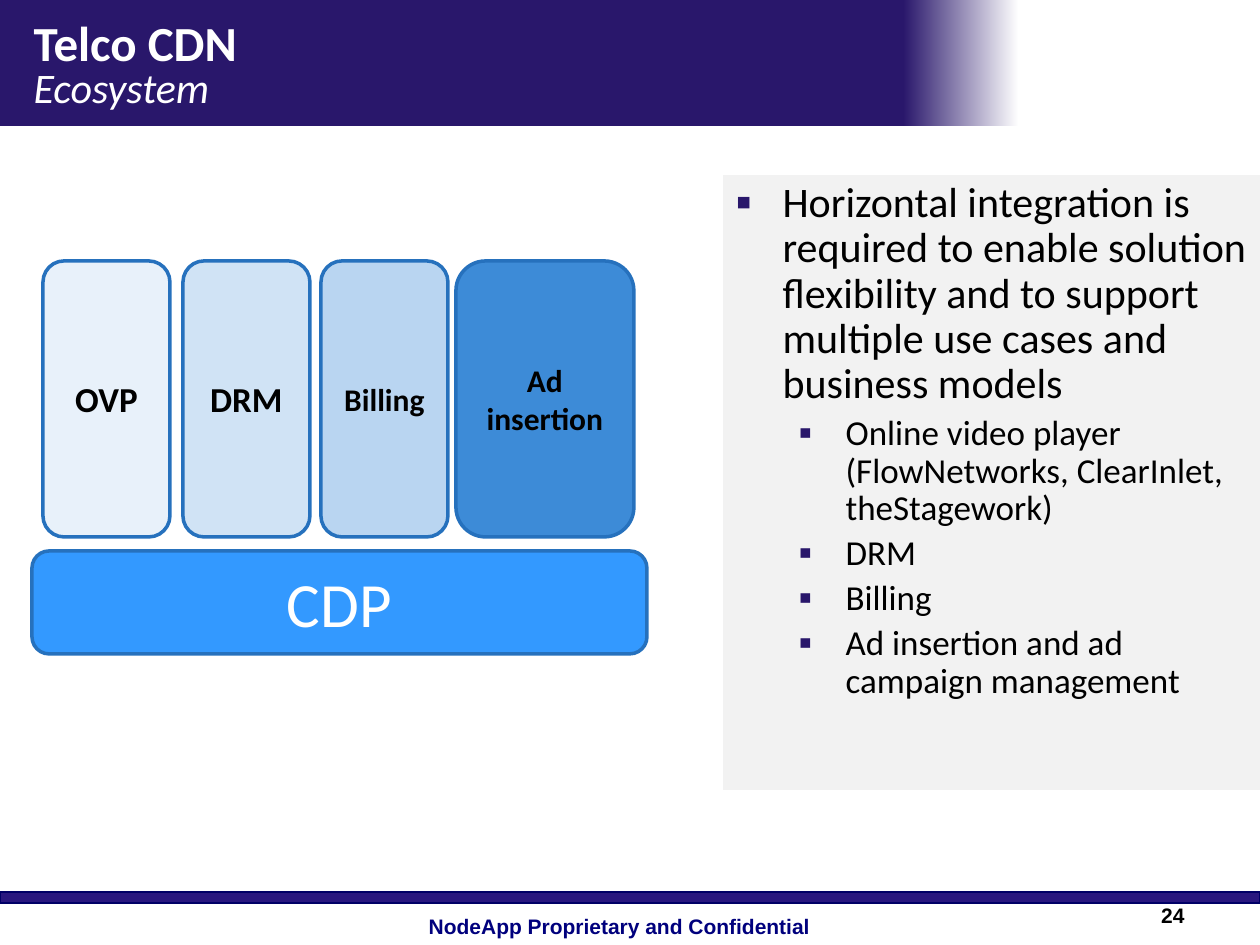
from lxml.etree import SubElement
from pptx import Presentation
from pptx.dml.color import RGBColor
from pptx.enum.shapes import MSO_SHAPE
from pptx.enum.text import MSO_ANCHOR, MSO_AUTO_SIZE, PP_ALIGN
from pptx.oxml.ns import qn
from pptx.util import Pt

SCALE = 914400 / 126
HUES = {
    "navy": "29176B", "rule": "29177F", "edge": "000066", "foot": "00007D",
    "white": "FFFFFF", "black": "000000", "panel": "F2F2F2", "line": "2671BD",
    "base": "3399FF", "ovp": "E8F1FA", "drm": "D0E3F5", "bill": "B9D5F1",
    "ads": "3D8BD7",
}


def px(num):
    """Turn pixels into EMU."""
    return round(num * SCALE)


def hue(name):
    """Look up a colour by name."""
    return RGBColor.from_string(HUES[name])


def apply(item, vals):
    """Set each attribute in a dict of values."""
    for key, val in vals.items():
        setattr(item, key, val)


class Deck:
    """Hold the style and the current slide."""

    def __init__(self):
        """Open a deck with one title and content slide."""
        self.prs = Presentation()
        apply(self.prs, {"slide_width": px(1260), "slide_height": px(945)})
        self.slide = self.prs.slides.add_slide(self.prs.slide_layouts[1])
        self.shapes = self.slide.shapes

    def run(self, para, text, size, tone="black", face="Calibri", **more):
        """Add a styled run to a paragraph."""
        run = para.add_run()
        run.text = text
        apply(run.font, {"size": Pt(size), "name": face, **more})
        run.font.color.rgb = hue(tone)

    def frame(self, shape, anchor):
        """Set wrap and anchor of a text frame and return it."""
        apply(shape.text_frame, {
            "word_wrap": True, "auto_size": MSO_AUTO_SIZE.NONE,
            "vertical_anchor": anchor})
        return shape.text_frame

    def box(self, area, fill, edge=None, width=2, kind=MSO_SHAPE.RECTANGLE):
        """Draw a filled shape."""
        shape = self.shapes.add_shape(kind, *map(px, area))
        shape.shadow.inherit = False
        shape.fill.solid()
        shape.fill.fore_color.rgb = hue(fill)
        if edge:
            shape.line.color.rgb = hue(edge)
            shape.line.width = Pt(width)
        else:
            shape.line.fill.background()
        return shape

    def fade(self, area, start, end):
        """Draw a band that fades from left to right."""
        fill = self.box(area, start).fill
        fill.gradient()
        fill.gradient_angle = 0
        for stop, name, spot in zip(fill.gradient_stops, (start, end), (0, 1)):
            stop.color.rgb = hue(name)
            stop.position = spot

    def block(self, area, fill, text, size, tone="black", bold=True):
        """Draw a rounded block with a centred label."""
        shape = self.box(area, fill, "line", kind=MSO_SHAPE.ROUNDED_RECTANGLE)
        para = self.frame(shape, MSO_ANCHOR.MIDDLE).paragraphs[0]
        para.alignment = PP_ALIGN.CENTER
        self.run(para, text, size, tone, bold=bold)

    def note(self, area, text, tone, align):
        """Add a small bold footer text."""
        shape = self.shapes.add_textbox(*map(px, area))
        para = self.frame(shape, MSO_ANCHOR.BOTTOM).paragraphs[0]
        para.alignment = align
        self.run(para, text, 12, tone, "Arial", bold=True)

    def holder(self, shape, area, anchor):
        """Place a placeholder in front and return its text frame."""
        self.shapes.element.append(shape.element)
        apply(shape, dict(zip(("left", "top", "width", "height"), map(px, area))))
        return self.frame(shape, anchor)

    def title(self, area, head, sub):
        """Fill the title with a heading and a subheading."""
        frame = self.holder(self.shapes.title, area, MSO_ANCHOR.MIDDLE)
        para = frame.paragraphs[0]
        apply(para, {"alignment": PP_ALIGN.LEFT, "line_spacing": 0.8})
        self.run(para, head, 28, "white", bold=True)
        para.add_line_break()
        self.run(para, sub, 24, "white", bold=False, italic=True)

    def bullet(self, para, left):
        """Give a paragraph a square bullet and a hanging indent."""
        props = para._p.get_or_add_pPr()
        props.set("marL", str(px(left)))
        props.set("indent", str(px(-47)))
        tint = SubElement(props, qn("a:buClr"))
        SubElement(tint, qn("a:srgbClr"), val=HUES["navy"])
        SubElement(props, qn("a:buSzPct"), val="110000")
        SubElement(props, qn("a:buFont"), typeface="Arial")
        SubElement(props, qn("a:buChar"), char="▪")

    def body(self, area, fill, rows):
        """Fill the body with a bulleted list of (level, text) rows."""
        shape = self.slide.placeholders[1]
        frame = self.holder(shape, area, MSO_ANCHOR.TOP)
        shape.fill.solid()
        shape.fill.fore_color.rgb = hue(fill)
        for spot, (level, text) in enumerate(rows):
            para = frame.add_paragraph() if spot else frame.paragraphs[0]
            size = (24, 20)[level]
            self.bullet(para, (47, 110)[level])
            apply(para, {
                "level": level, "alignment": PP_ALIGN.LEFT, "line_spacing": 0.9,
                "space_before": Pt(size / 5 if spot else 0)})
            self.run(para, text, size)


def main():
    """Build the slide."""
    deck = Deck()
    deck.fade((903, 0, 116, 126), "navy", "white")
    deck.box((0, 0, 904, 126), "navy")
    deck.box((0, 892, 1260, 11), "rule", "edge", 1.5)
    deck.note((378, 882, 483, 63), "NodeApp Proprietary and Confidential",
              "foot", PP_ALIGN.CENTER)
    deck.title((21, 31, 945, 74), "Telco CDN", "Ecosystem")
    deck.body((723, 175, 537, 615), "panel", [
        (0, "Horizontal integration is required to enable solution flexibility "
            "and to support multiple use cases and business models"),
        (1, "Online video player (FlowNetworks, ClearInlet, theStagework)"),
        (1, "DRM"),
        (1, "Billing"),
        (1, "Ad insertion and ad campaign management"),
    ])
    deck.note((1071, 892, 126, 42), "24", "black", PP_ALIGN.RIGHT)
    deck.block((32, 551, 615, 103), "base", "CDP", 36, "white", False)
    for left, wide, fill, text, size in (
            (43, 127, "ovp", "OVP", 20), (183, 127, "drm", "DRM", 20),
            (321, 127, "bill", "Billing", 18),
            (456, 178, "ads", "Ad insertion", 18)):
        deck.block((left, 261, wide, 276), fill, text, size)
    deck.prs.save("out.pptx")


if __name__ == "__main__":
    main()
